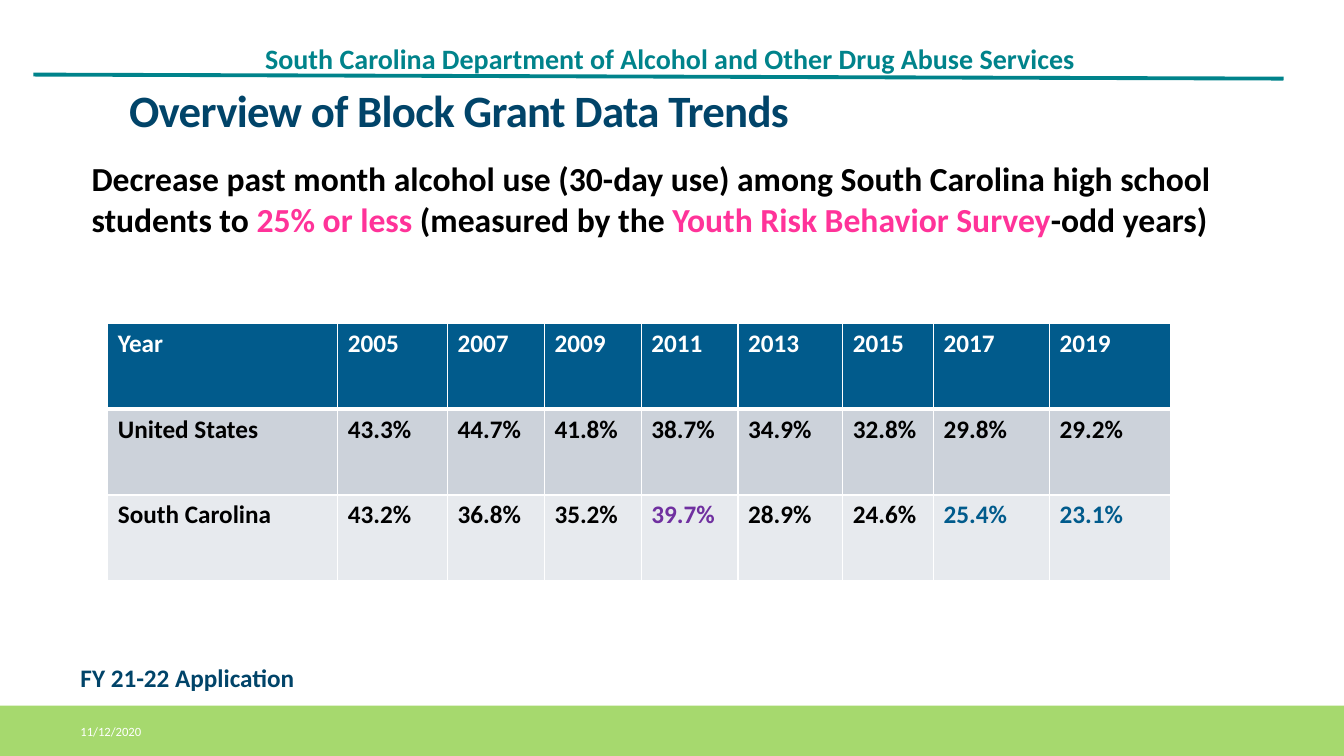
from dataclasses import dataclass
from lxml import etree
from pptx import Presentation
from pptx import util as u
from pptx.dml.color import RGBColor
from pptx.enum import shapes, text
from pptx.oxml.ns import qn


@dataclass(frozen=True)
class Theme:
    font: str = "Calibri"
    teal: str = "00838B"
    navy: str = "014469"
    blue: str = "015B8C"
    green: str = "A6D96E"
    pink: str = "FF3399"
    purple: str = "7030A0"
    black: str = "000000"
    white: str = "FFFFFF"
    bands: tuple = ("CCD2DA", "E7EAEE")
    title: int = 32
    body: int = 24
    head: int = 20
    label: int = 18
    small: int = 9


def write(frame, runs, size, color, bold=True, anchor="TOP", wrap=True,
          inset=(0.1, 0.05), lead=None, track=None):
    frame.word_wrap = wrap
    frame.auto_size = text.MSO_AUTO_SIZE.NONE
    frame.vertical_anchor = text.MSO_ANCHOR[anchor]
    frame.margin_left = frame.margin_right = u.Inches(inset[0])
    frame.margin_top = frame.margin_bottom = u.Inches(inset[1])
    para = frame.paragraphs[0]
    para.alignment = text.PP_ALIGN.LEFT
    if lead:
        para.line_spacing = lead
    for words, tint in [(runs, color)] if isinstance(runs, str) else runs:
        run = para.add_run()
        run.text = words
        font = run.font
        font.name, font.size, font.bold = Theme.font, u.Pt(size), bold
        font.color.rgb = RGBColor.from_string(tint)
        if track:
            run._r.get_or_add_rPr().set("spc", str(track))


def edge(cell, side, width, color):
    line = etree.SubElement(cell._tc.get_or_add_tcPr(), qn("a:" + side))
    line.set("w", str(u.Pt(width)))
    fill = etree.SubElement(line, qn("a:solidFill"))
    etree.SubElement(fill, qn("a:srgbClr")).set("val", color)


class Page:
    def __init__(self, deck, theme):
        self.theme = theme
        self.slide = deck.slides.add_slide(deck.slide_layouts[5])
        self.shapes = self.slide.shapes

    def title(self, words, box):
        shape = self.shapes.title
        shape.left, shape.top, shape.width, shape.height = map(u.Inches, box)
        write(shape.text_frame, words, self.theme.title, self.theme.navy,
              lead=0.85, track=-50)

    def label(self, words, box, size, color, **style):
        shape = self.shapes.add_textbox(*map(u.Inches, box))
        write(shape.text_frame, words, size, color, **style)

    def bar(self, box, color):
        shape = self.shapes.add_shape(shapes.MSO_SHAPE.RECTANGLE, *map(u.Inches, box))
        shape.shadow.inherit = False
        shape.fill.solid()
        shape.fill.fore_color.rgb = RGBColor.from_string(color)
        shape.line.fill.background()

    def rule(self, ends, color, width):
        line = self.shapes.add_connector(shapes.MSO_CONNECTOR.STRAIGHT, *map(u.Inches, ends))
        line.line.color.rgb = RGBColor.from_string(color)
        line.line.width = u.Pt(width)
        etree.SubElement(line._element.spPr, qn("a:effectLst"))

    def table(self, rows, left, top, widths, height, marks):
        t = self.theme
        box = (left, top, sum(widths), height * len(rows))
        grid = self.shapes.add_table(len(rows), len(widths), *map(u.Inches, box)).table
        for col, width in zip(grid.columns, widths):
            col.width = u.Inches(width)
        for r, row in enumerate(rows):
            grid.rows[r].height = u.Inches(height)
            for c, words in enumerate(row):
                cell = grid.cell(r, c)
                for side in ("lnL", "lnR", "lnT", "lnB"):
                    thick = (r, side) in ((0, "lnB"), (1, "lnT"))
                    edge(cell, side, 3 if thick else 1, t.white)
                cell.fill.solid()
                back = t.bands[r - 1] if r else t.blue
                cell.fill.fore_color.rgb = RGBColor.from_string(back)
                color = marks.get((r, c), t.black) if r else t.white
                write(cell.text_frame, words, t.label, color)


def main():
    deck = Presentation()
    deck.slide_width, deck.slide_height = u.Inches(13.33), u.Inches(7.5)
    t = Theme()
    page = Page(deck, t)
    page.label("South Carolina Department of Alcohol and Other Drug Abuse Services",
               (2.56, 0.28, 10.21, 0.63), t.head, t.teal,
               anchor="MIDDLE", inset=(0.07, 0.04), lead=0.9)
    page.rule((0.33, 0.74, 12.73, 0.78), t.teal, 2.75)
    page.bar((0, 7, 13.33, 0.5), t.green)
    page.label("11/12/2020", (0.7, 7.06, 2.7, 0.4), t.small, t.white,
               bold=False, anchor="MIDDLE")
    rows = [
        ["Year", *map(str, range(2005, 2020, 2))],
        ["United States", "43.3%", "44.7%", "41.8%", "38.7%", "34.9%", "32.8%", "29.8%", "29.2%"],
        ["South Carolina", "43.2%", "36.8%", "35.2%", "39.7%", "28.9%", "24.6%", "25.4%", "23.1%"],
    ]
    widths = [2.28, 1.09, 0.96, 0.96, 0.96, 1.04, 0.9, 1.15, 1.2]
    marks = {(2, 4): t.purple, (2, 7): t.blue, (2, 8): t.blue}
    page.table(rows, 1.07, 3.21, widths, 0.85, marks)
    page.title("Overview of Block Grant Data Trends", (1.18, 0.85, 11, 0.67))
    goal = [
        ("Decrease past month alcohol use (30-day use) among South Carolina "
         "high school students to ", t.black),
        ("25% or less ", t.pink),
        ("(measured by the ", t.black),
        ("Youth Risk Behavior Survey", t.pink),
        ("-odd years)", t.black),
    ]
    page.label(goal, (0.81, 1.52, 11.46, 1.48), t.body, t.black)
    page.label("FY 21-22 Application", (0.7, 6.52, 2.34, 0.4), t.label, t.navy, wrap=False)
    deck.save("out.pptx")


if __name__ == "__main__":
    main()
